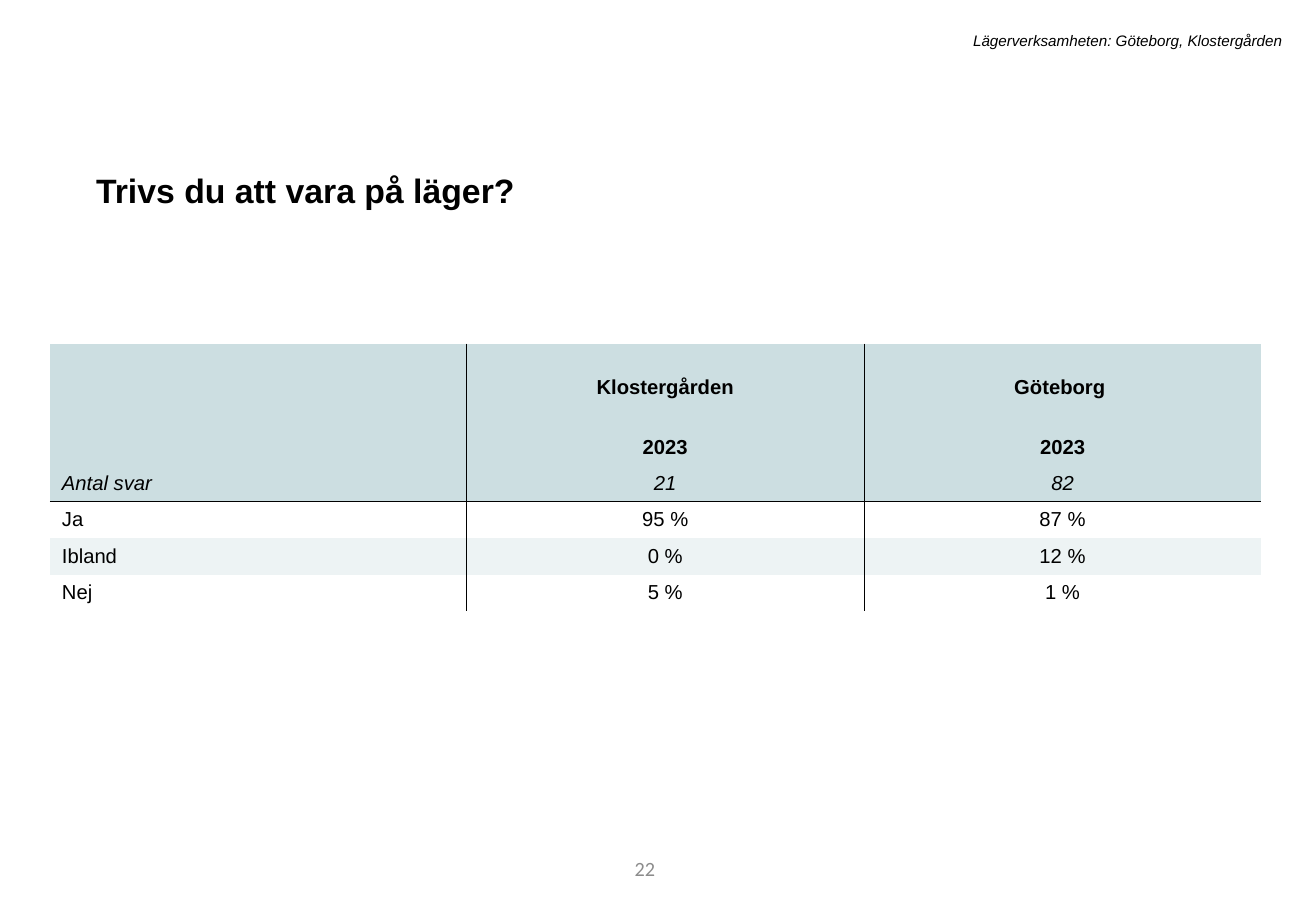
from dataclasses import dataclass

from lxml.etree import SubElement
from pptx import Presentation
from pptx.dml.color import RGBColor
from pptx.enum.text import MSO_ANCHOR, MSO_AUTO_SIZE, PP_ALIGN
from pptx.oxml.ns import qn
from pptx.util import Inches, Pt


@dataclass(frozen=True)
class Theme:
    text: str = "000000"
    muted: str = "8C8C8C"
    header_fill: str = "CCDEE1"
    band_fill: str = "EDF3F4"
    font: str = "Arial"
    number_font: str = "Calibri"
    title_size: float = 20
    body_size: float = 12
    note_size: float = 9
    border_width: float = 0.25


class SlideBuilder:
    def __init__(self, presentation, theme):
        self.theme = theme
        self.slide = presentation.slides.add_slide(presentation.slide_layouts[5])

    def fill_frame(self, frame, text, align=PP_ALIGN.LEFT, color=None, **font_format):
        """Put one formatted run in the frame's first paragraph."""
        paragraph = frame.paragraphs[0]
        paragraph.alignment = align
        run = paragraph.add_run()
        run.text = text
        values = {"name": self.theme.font, "size": self.theme.body_size,
                  "bold": False, "italic": False, **font_format}
        values["size"] = Pt(values["size"])
        for name, value in values.items():
            setattr(run.font, name, value)
        run.font.color.rgb = RGBColor.from_string(color or self.theme.text)
        return paragraph

    def set_frame(self, frame, anchor):
        values = {"word_wrap": True, "auto_size": MSO_AUTO_SIZE.NONE,
                  "vertical_anchor": anchor}
        for name, value in values.items():
            setattr(frame, name, value)

    def add_title(self, text, left, top, width, height):
        title = self.slide.shapes.title
        position = {"left": left, "top": top, "width": width, "height": height}
        for name, value in position.items():
            setattr(title, name, Inches(value))
        self.set_frame(title.text_frame, MSO_ANCHOR.TOP)
        paragraph = self.fill_frame(title.text_frame, text,
                                    size=self.theme.title_size, bold=True)
        paragraph.line_spacing = 1.2
        paragraph.space_before = Pt(0)

    def add_text(self, text, box, anchor=MSO_ANCHOR.TOP, **text_format):
        shape = self.slide.shapes.add_textbox(*map(Inches, box))
        self.set_frame(shape.text_frame, anchor)
        self.fill_frame(shape.text_frame, text, **text_format)

    def set_borders(self, cell, visible_sides):
        """Draw the given sides (of "LRTB") and clear the others."""
        properties = cell._tc.get_or_add_tcPr()
        for side in "LRTB":
            line = SubElement(properties, qn(f"a:ln{side}"))
            if side in visible_sides:
                line.set("w", str(Pt(self.theme.border_width)))
                fill = SubElement(line, qn("a:solidFill"))
                SubElement(fill, qn("a:srgbClr")).set("val", self.theme.text)
            else:
                SubElement(line, qn("a:noFill"))

    def add_answer_table(self, rows, header_rows, left, top, column_widths, row_heights):
        """The last header row holds the response counts, in italics."""
        size = sum(column_widths), sum(row_heights)
        table = self.slide.shapes.add_table(
            len(rows), len(column_widths), *map(Inches, (left, top, *size))).table
        table.first_row = table.horz_banding = False
        for column, width in zip(table.columns, column_widths):
            column.width = Inches(width)
        for row, height in zip(table.rows, row_heights):
            row.height = Inches(height)

        count_row = header_rows - 1
        last_column = len(column_widths) - 1
        for row_index, texts in enumerate(rows):
            is_heading = row_index < count_row
            if row_index < header_rows:
                fill = self.theme.header_fill
            else:
                fill = self.theme.band_fill if (row_index - header_rows) % 2 else None
            for column_index, text in enumerate(texts):
                cell = table.cell(row_index, column_index)
                sides = {"L": column_index > 0, "R": column_index < last_column,
                         "T": row_index == header_rows, "B": row_index == count_row}
                self.set_borders(cell, [side for side, shown in sides.items() if shown])
                if fill:
                    cell.fill.solid()
                    cell.fill.fore_color.rgb = RGBColor.from_string(fill)
                else:
                    cell.fill.background()
                cell.vertical_anchor = MSO_ANCHOR.BOTTOM if is_heading else MSO_ANCHOR.MIDDLE
                if text:
                    self.fill_frame(cell.text_frame, text,
                                    align=PP_ALIGN.CENTER if column_index else PP_ALIGN.LEFT,
                                    bold=is_heading, italic=row_index == count_row)


def main():
    presentation = Presentation()
    presentation.slide_width = Inches(10.83)
    presentation.slide_height = Inches(7.5)
    theme = Theme()
    builder = SlideBuilder(presentation, theme)

    builder.add_text("22", (3.05, 6.95, 2.44, 0.4), anchor=MSO_ANCHOR.MIDDLE,
                     align=PP_ALIGN.RIGHT, color=theme.muted, name=theme.number_font)
    builder.add_title("Trivs du att vara på läger?", 0.69, 1.28, 9.4, 0.47)
    builder.add_text("Lägerverksamheten: Göteborg, Klostergården",
                     (1.79, 0.21, 8.86, 0.25), align=PP_ALIGN.RIGHT,
                     size=theme.note_size, italic=True)
    answers = [
        ("", "Klostergården", "Göteborg "),
        ("", "2023", "2023"),
        ("Antal svar", "21", "82"),
        ("Ja", "95 %", "87 %"),
        ("Ibland", "0 %", "12 %"),
        ("Nej", "5 %", "1 %"),
    ]
    builder.add_answer_table(answers, header_rows=3, left=0.41, top=2.83,
                             column_widths=[3.43, 3.27, 3.27],
                             row_heights=[0.5] * 2 + [0.3] * 4)
    presentation.save("out.pptx")


if __name__ == "__main__":
    main()
